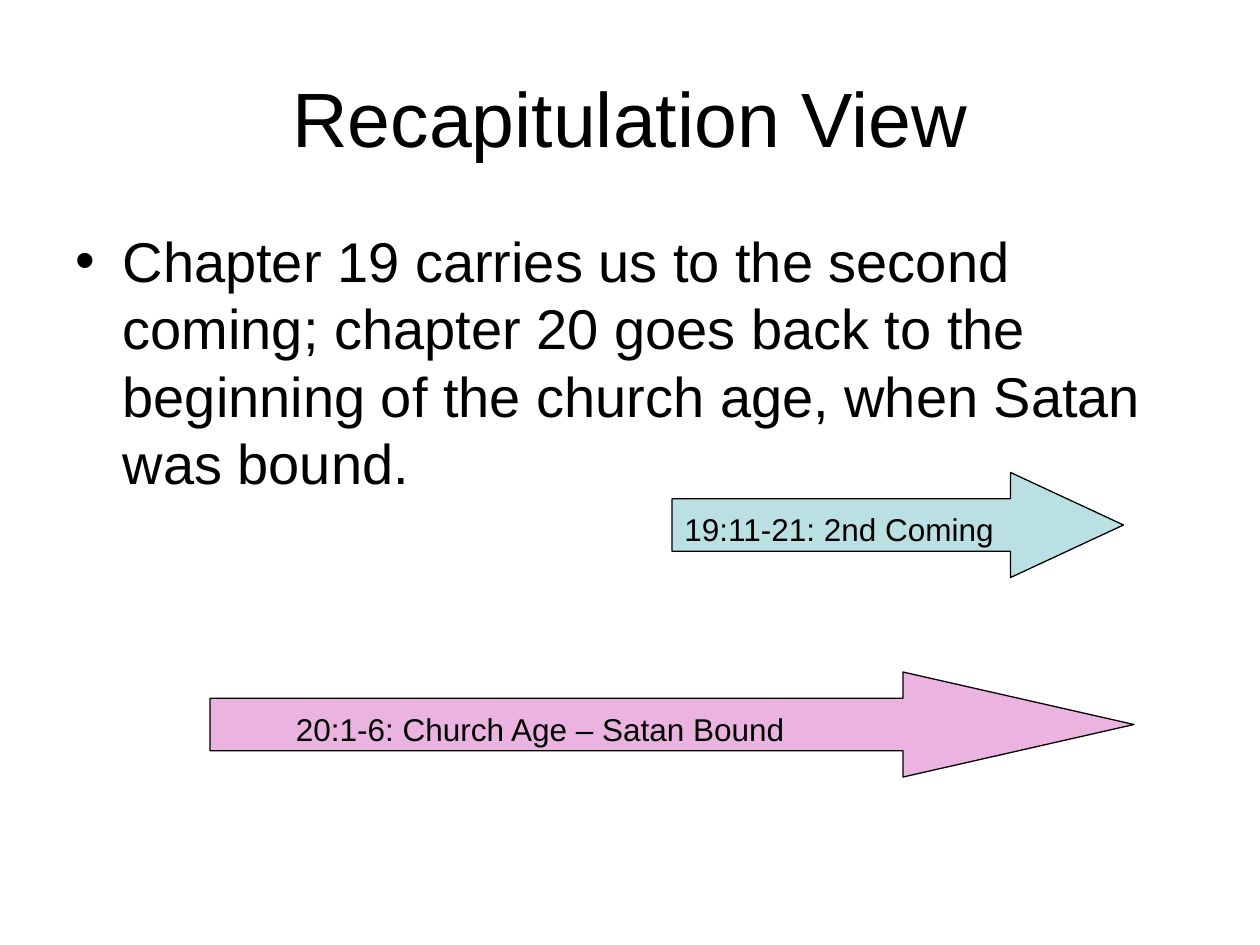
from dataclasses import dataclass

from lxml import etree
from pptx import Presentation
from pptx.dml.color import RGBColor
from pptx.enum.shapes import MSO_SHAPE as Shape
from pptx.enum.text import MSO_ANCHOR as Anchor, PP_ALIGN as Align
from pptx.oxml.ns import qn
from pptx.slide import Slide
from pptx.util import Pt

FONT = "Arial"
BLACK = RGBColor(0x00, 0x00, 0x00)
WHITE = RGBColor(0xFF, 0xFF, 0xFF)
TEAL = RGBColor(0xBB, 0xE0, 0xE3)
PINK = RGBColor(0xEB, 0xB3, 0xE0)

ARROW_HEIGHT = 60
LABEL_DROP = 18  # from arrow top to label top
LABEL_HEIGHT = 29


@dataclass(frozen=True)
class Period:
    label: str
    left: float
    top: float
    width: float
    head_ratio: float  # head length relative to arrow height
    label_left: float
    label_width: float
    color: RGBColor


PERIODS = [
    Period("19:11-21: 2nd Coming", 384, 270, 258, 1.075, 384, 204, TEAL),
    Period("20:1-6: Church Age – Satan Bound", 120, 384, 528, 2.2, 162, 330, PINK),
]


def add_text(slide: Slide, text: str, left: float, top: float, width: float,
             height: float, *, size: float, align: Align = Align.LEFT,
             anchor: Anchor = Anchor.TOP, bullet: str = "",
             indent: float = 0) -> None:
    """Add one paragraph of text, with a hanging bullet if one is given."""
    box = slide.shapes.add_textbox(Pt(left), Pt(top), Pt(width), Pt(height))
    frame = box.text_frame
    frame.word_wrap = True
    frame.vertical_anchor = anchor
    paragraph = frame.paragraphs[0]
    paragraph.alignment = align
    run = paragraph.add_run()
    run.text = text
    run.font.name = FONT
    run.font.size = Pt(size)
    run.font.color.rgb = BLACK
    if bullet:
        properties = paragraph._p.get_or_add_pPr()
        properties.set("marL", str(Pt(indent)))
        properties.set("indent", str(-Pt(indent)))
        etree.SubElement(properties, qn("a:buFont")).set("typeface", FONT)
        etree.SubElement(properties, qn("a:buChar")).set("char", bullet)


def add_period(slide: Slide, period: Period) -> None:
    """Draw a period as a right arrow with its label on the shaft."""
    arrow = slide.shapes.add_shape(
        Shape.RIGHT_ARROW, Pt(period.left), Pt(period.top),
        Pt(period.width), Pt(ARROW_HEIGHT))
    arrow.adjustments[0] = 0.5
    arrow.adjustments[1] = period.head_ratio
    arrow.shadow.inherit = False
    arrow.fill.solid()
    arrow.fill.fore_color.rgb = period.color
    arrow.line.color.rgb = BLACK
    arrow.line.width = Pt(0.75)
    add_text(slide, period.label, period.label_left, period.top + LABEL_DROP,
             period.label_width, LABEL_HEIGHT, size=18)


def main() -> None:
    deck = Presentation()
    deck.slide_width, deck.slide_height = Pt(720), Pt(540)
    slide = deck.slides.add_slide(deck.slide_layouts[6])
    slide.background.fill.solid()
    slide.background.fill.fore_color.rgb = WHITE

    # Title and main point
    add_text(slide, "Recapitulation View", 36, 21.6, 648, 90, size=44,
             align=Align.CENTER, anchor=Anchor.MIDDLE)
    add_text(slide, "Chapter 19 carries us to the second coming; chapter 20 goes "
             "back to the beginning of the church age, when Satan was bound.",
             36, 126, 648, 356.4, size=32, bullet="•", indent=27)

    # Timeline arrows
    for period in PERIODS:
        add_period(slide, period)

    deck.save("out.pptx")


if __name__ == "__main__":
    main()
